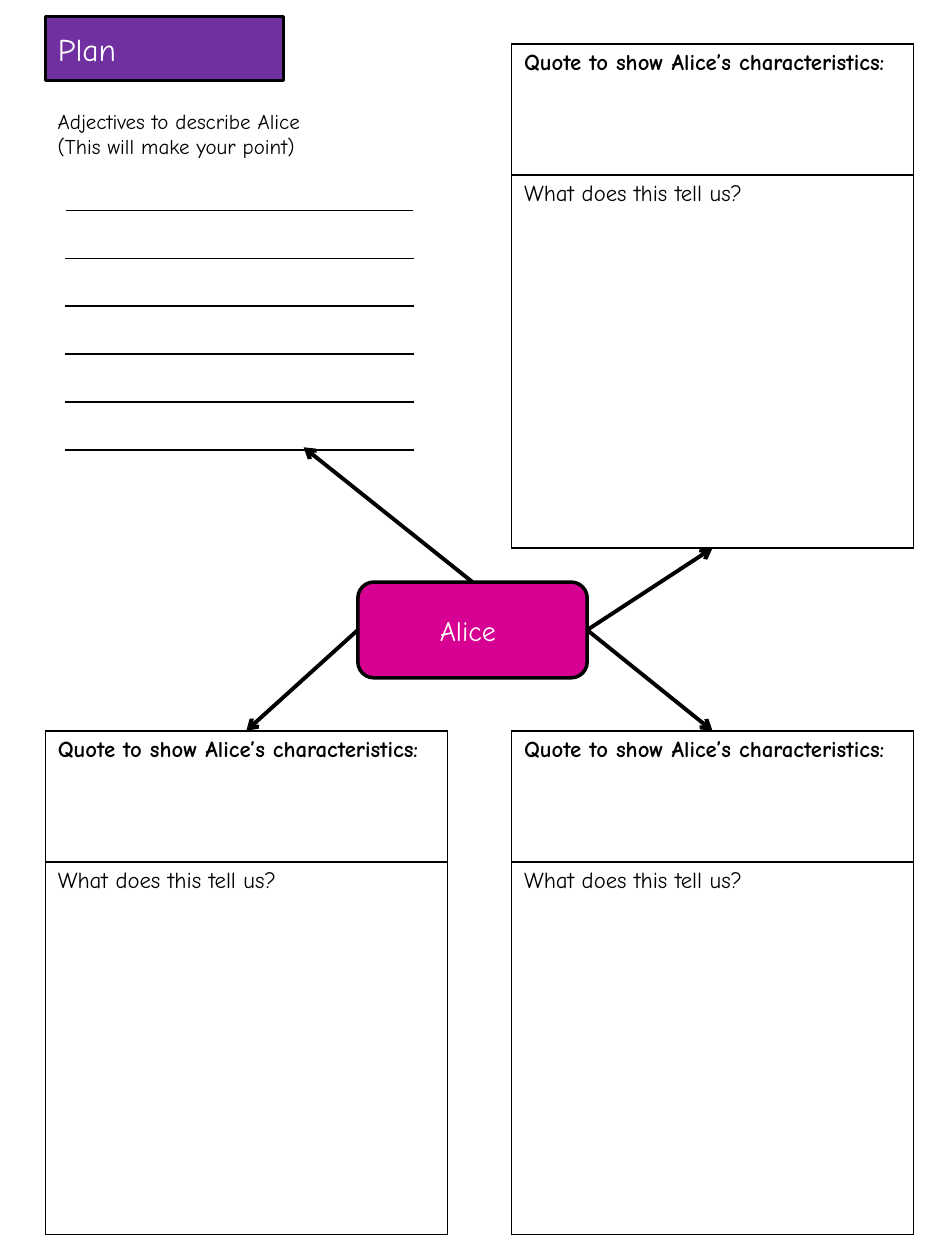
from dataclasses import dataclass

from pptx import Presentation
from pptx.dml.color import RGBColor
from pptx.enum.shapes import MSO_CONNECTOR, MSO_SHAPE
from pptx.enum.text import MSO_ANCHOR, MSO_AUTO_SIZE, PP_ALIGN
from pptx.oxml import parse_xml
from pptx.oxml.ns import nsdecls
from pptx.util import Inches, Pt


@dataclass(frozen=True)
class Theme:
    """Colours, font and type sizes of the planning sheet."""

    font: str = "Comic Neue"
    ink: str = "000000"
    paper: str = "FFFFFF"
    title_fill: str = "7030A0"
    hub_fill: str = "D60093"
    title_size: float = 18
    hub_size: float = 16
    card_size: float = 13
    prompt_size: float = 12
    outline: float = 2
    arrow: float = 2.25
    border: float = 1


THEME = Theme()
WIDTH, HEIGHT = Inches(7.5), Inches(10)
COLUMNS, ROWS = 75, 100
LEFT_CARD, RIGHT_CARD = 3.6, 40.6
TOP_CARD, BOTTOM_CARD = 3.5, 58
CARD_WIDTH = 31.9
CARD_ROWS = (10.4, 29.6)
CARD_TEXTS = ("Quote to show Alice’s characteristics:", "What does this tell us?")
TOP_SITE, LEFT_SITE, RIGHT_SITE = 0, 1, 3


def across(columns):
    """Turn grid columns into a length."""
    return round(WIDTH * columns / COLUMNS)


def down(rows):
    """Turn grid rows into a length."""
    return round(HEIGHT * rows / ROWS)


def place(left, top, width, height):
    """Turn a grid box into slide lengths."""
    return across(left), down(top), across(width), down(height)


def style_text(text_frame, size, color, bold=False, alignment=PP_ALIGN.LEFT):
    """Format every paragraph and run of a text frame."""
    for paragraph in text_frame.paragraphs:
        paragraph.alignment = alignment
        for run in paragraph.runs:
            run.font.name = THEME.font
            run.font.size = Pt(size)
            run.font.bold = bold
            run.font.color.rgb = RGBColor.from_string(color)


def style_box(shape, fill):
    """Give a shape a solid fill, a black outline and centred height."""
    shape.fill.solid()
    shape.fill.fore_color.rgb = RGBColor.from_string(fill)
    shape.line.color.rgb = RGBColor.from_string(THEME.ink)
    shape.line.width = Pt(THEME.outline)
    shape.text_frame.vertical_anchor = MSO_ANCHOR.MIDDLE


def format_title(slide):
    """Place the title as a purple label."""
    title = slide.shapes.title
    title.left, title.top, title.width, title.height = place(3.6, 1.3, 18.9, 5.1)
    style_box(title, THEME.title_fill)
    title.text_frame.text = "Plan"
    title.text_frame.auto_size = MSO_AUTO_SIZE.NONE
    style_text(title.text_frame, THEME.title_size, THEME.paper)


def add_hub(slide):
    """Add the central rounded box."""
    hub = slide.shapes.add_shape(
        MSO_SHAPE.ROUNDED_RECTANGLE, *place(28.4, 46.2, 18.2, 7.6)
    )
    hub.shadow.inherit = False
    style_box(hub, THEME.hub_fill)
    hub.text_frame.text = "Alice "
    style_text(
        hub.text_frame, THEME.hub_size, THEME.paper, alignment=PP_ALIGN.CENTER
    )
    return hub


def add_prompt(slide):
    """Add the instruction above the writing lines."""
    prompt = slide.shapes.add_textbox(*place(3.6, 8.1, 29.1, 5))
    prompt.text_frame.word_wrap = True
    prompt.text_frame.text = "Adjectives to describe Alice\n(This will make your point)"
    style_text(prompt.text_frame, THEME.prompt_size, THEME.ink)


def set_borders(cell, sides, vertical):
    """Draw side borders in one colour and horizontal borders in another."""
    properties = cell._tc.get_or_add_tcPr()
    colors = {"L": sides, "R": sides, "T": vertical, "B": vertical}
    for index, (edge, color) in enumerate(colors.items()):
        border = parse_xml(
            f'<a:ln{edge} {nsdecls("a")} w="{Pt(THEME.border)}"><a:solidFill>'
            f'<a:srgbClr val="{color}"/></a:solidFill></a:ln{edge}>'
        )
        properties.insert(index, border)


def add_grid(slide, left, top, width, heights, side_color):
    """Add a plain one-column table and return its cells."""
    frame = slide.shapes.add_table(
        len(heights), 1, *place(left, top, width, sum(heights))
    )
    table = frame.table
    table.first_row = False
    table.horz_banding = False
    for row, height in zip(table.rows, heights):
        row.height = down(height)
    cells = list(table.iter_cells())
    for cell in cells:
        cell.fill.solid()
        cell.fill.fore_color.rgb = RGBColor.from_string(THEME.paper)
        set_borders(cell, side_color, THEME.ink)
    return cells


def add_writing_lines(slide):
    """Add ruled lines as an empty table with white sides."""
    for cell in add_grid(slide, 5.2, 16.7, 27.6, [3.8] * 5, THEME.paper):
        cell.margin_top = cell.margin_bottom = 0


def add_card(slide, left, top):
    """Add a quote card with its question below."""
    cells = add_grid(slide, left, top, CARD_WIDTH, CARD_ROWS, THEME.ink)
    for index, (cell, text) in enumerate(zip(cells, CARD_TEXTS)):
        cell.text_frame.text = text
        style_text(cell.text_frame, THEME.card_size, THEME.ink, bold=index == 0)


def add_arrow(slide, hub, site, column, row):
    """Add an arrow from a side of the hub to a grid point."""
    end = across(column), down(row)
    arrow = slide.shapes.add_connector(MSO_CONNECTOR.STRAIGHT, *end, *end)
    arrow.begin_connect(hub, site)
    arrow.line.color.rgb = RGBColor.from_string(THEME.ink)
    arrow.line.width = Pt(THEME.arrow)
    arrow.line._get_or_add_ln().append(
        parse_xml(f'<a:tailEnd {nsdecls("a")} type="arrow"/>')
    )
    arrow._element.spPr.append(parse_xml(f'<a:effectLst {nsdecls("a")}/>'))


def main():
    """Build the planning sheet and save it."""
    presentation = Presentation()
    presentation.slide_width, presentation.slide_height = WIDTH, HEIGHT
    slide = presentation.slides.add_slide(presentation.slide_layouts[5])
    format_title(slide)
    hub = add_hub(slide)
    add_writing_lines(slide)
    add_prompt(slide)
    add_arrow(slide, hub, TOP_SITE, 24.1, 35.5)
    cards = (
        (LEFT_CARD, BOTTOM_CARD, LEFT_SITE, BOTTOM_CARD),
        (RIGHT_CARD, BOTTOM_CARD, RIGHT_SITE, BOTTOM_CARD),
        (RIGHT_CARD, TOP_CARD, RIGHT_SITE, TOP_CARD + sum(CARD_ROWS)),
    )
    for left, top, site, target in cards:
        add_card(slide, left, top)
        add_arrow(slide, hub, site, left + CARD_WIDTH / 2, target)
    presentation.save("out.pptx")


if __name__ == "__main__":
    main()
